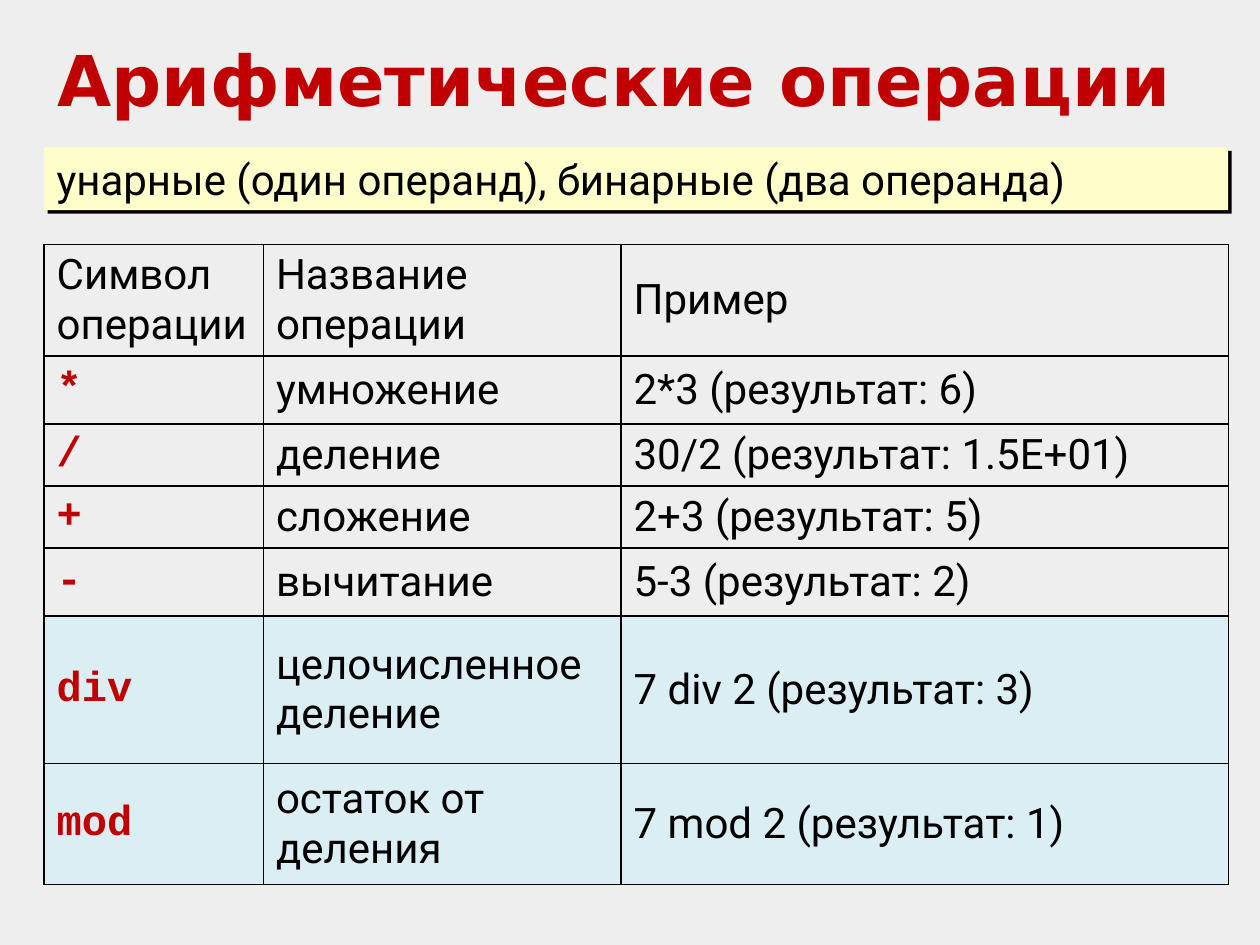
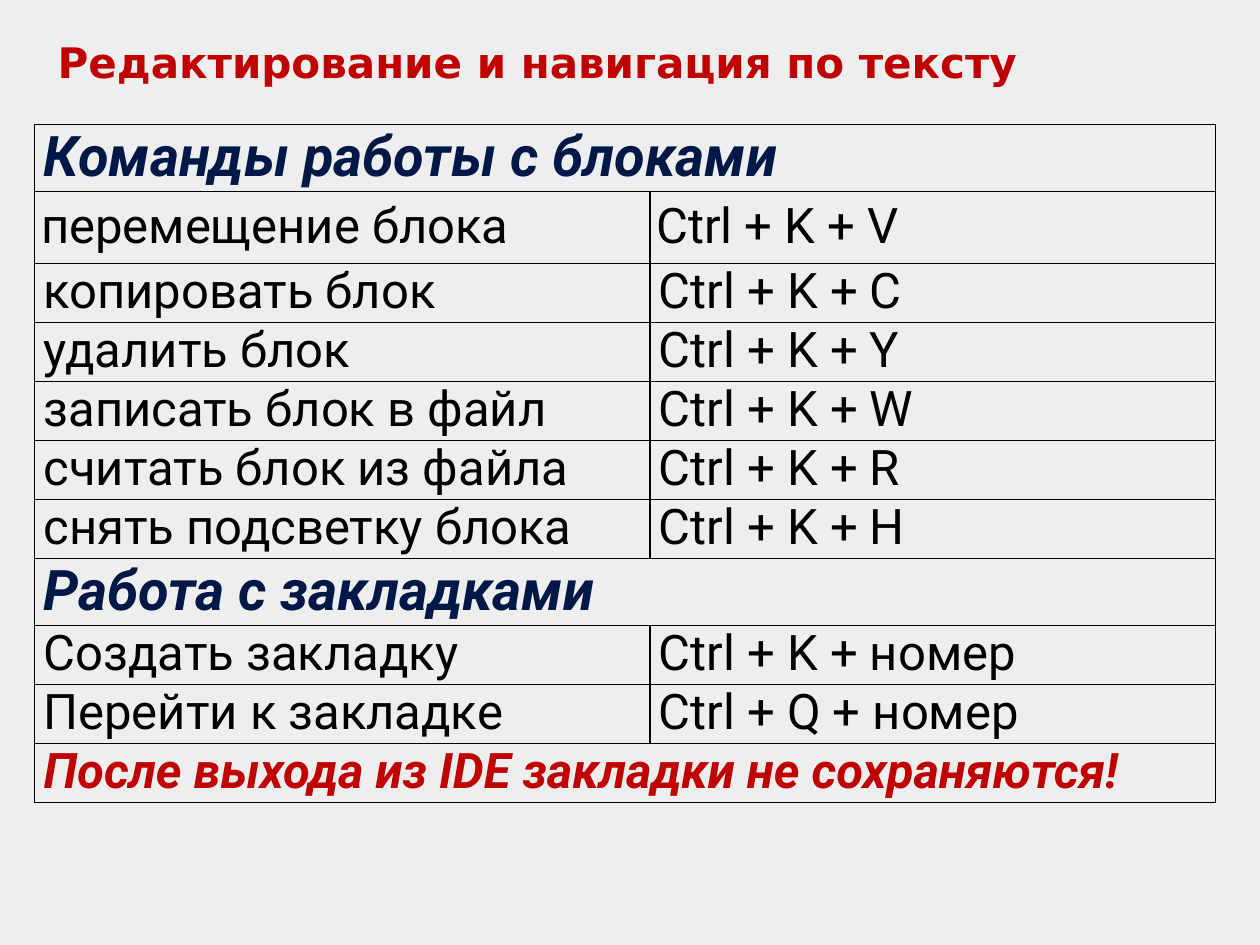
from dataclasses import dataclass

from lxml import etree
from pptx import Presentation
from pptx.dml.color import RGBColor
from pptx.enum import shapes, text
from pptx.oxml import ns
from pptx.util import Cm, Pt

COLORS = {
    "background": "EEEEEE",
    "accent": "C00000",
    "ink": "000000",
    "heading": "001848",
    "band": "FFFFCC",
    "integer_rows": "DBEEF4",
}
BODY_FONT = "Roboto"
TITLE_FONT = "DejaVu Sans"
CODE_FONT = "Courier New"

OPERATIONS = [
    ("Символ операции", "Название операции", "Пример"),
    ("*", "умножение", "2*3 (результат: 6)"),
    ("/", "деление", "30/2 (результат: 1.5E+01)"),
    ("+", "сложение", "2+3 (результат: 5)"),
    ("-", "вычитание", "5-3 (результат: 2)"),
    ("div", "целочисленное деление", "7 div 2 (результат: 3)"),
    ("mod", "остаток от деления", "7 mod 2 (результат: 1)"),
]
OPERATION_COLUMNS = [4.42, 7.21, 12.24]
OPERATION_ROWS = [2.22, 1.37, 1.25, 1.25, 1.37, 2.98, 2.44]

COMMANDS = [
    ("Команды работы с блоками",),
    ("перемещение блока", "Ctrl + K + V"),
    ("копировать блок", "Ctrl + K + C"),
    ("удалить блок", "Ctrl + K + Y"),
    ("записать блок в файл", "Ctrl + K + W"),
    ("считать блок из файла", "Ctrl + K + R"),
    ("снять подсветку блока", "Ctrl + K + H"),
    ("Работа с закладками",),
    ("Создать закладку", "Ctrl + K + номер"),
    ("Перейти к закладке", "Ctrl + Q + номер"),
    ("После выхода из IDE закладки не сохраняются!",),
]
COMMAND_COLUMNS = [12.4, 11.4]
HEADING_HEIGHT, FIRST_COMMAND_HEIGHT, COMMAND_HEIGHT = 1.35, 1.45, 1.19


@dataclass
class Box:
    left: float
    top: float
    width: float
    height: float

    def lengths(self):
        return Cm(self.left), Cm(self.top), Cm(self.width), Cm(self.height)


def color(name):
    return RGBColor.from_string(COLORS[name])


def style(paragraph, size, ink="ink", name=BODY_FONT, bold=False, italic=False):
    paragraph.alignment = text.PP_ALIGN.LEFT
    font = paragraph.font
    font.size, font.name, font.bold, font.italic = Pt(size), name, bold, italic
    font.color.rgb = color(ink)


def add_page(deck, title, size, box):
    page = deck.slides.add_slide(deck.slide_layouts[5])
    holder = page.shapes.title
    holder.left, holder.top, holder.width, holder.height = box.lengths()
    frame = holder.text_frame
    frame.text = title
    frame.auto_size = text.MSO_AUTO_SIZE.NONE
    frame.vertical_anchor = text.MSO_ANCHOR.TOP
    frame.margin_top = Cm(0.2)
    style(frame.paragraphs[0], size, "accent", TITLE_FONT, bold=True)
    return page


def add_band(page, box, wording):
    band = page.shapes.add_shape(shapes.MSO_SHAPE.RECTANGLE, *box.lengths())
    band.fill.solid()
    band.fill.fore_color.rgb = color("band")
    band.line.fill.background()
    band.shadow.inherit = False
    effects = band.element.spPr.find(ns.qn("a:effectLst"))
    shadow = etree.SubElement(effects, ns.qn("a:outerShdw"),
                              dist=str(Pt(2.8)), dir="2700000", algn="ctr", rotWithShape="0")
    etree.SubElement(shadow, ns.qn("a:srgbClr"), val=COLORS["ink"])
    frame = band.text_frame
    frame.word_wrap = True
    frame.vertical_anchor = text.MSO_ANCHOR.TOP
    frame.text = wording
    style(frame.paragraphs[0], 24)


def add_grid(page, box, columns, rows):
    table = page.shapes.add_table(len(rows), len(columns), *box.lengths()).table
    table.first_row = table.horz_banding = False
    for column, width in zip(table.columns, columns):
        column.width = Cm(width)
    for row, height in zip(table.rows, rows):
        row.height = Cm(height)
    for cell in table.iter_cells():
        properties = cell._tc.get_or_add_tcPr()
        for side in ("lnL", "lnR", "lnT", "lnB"):
            border = etree.SubElement(properties, ns.qn(f"a:{side}"), w=str(Pt(1)))
            fill = etree.SubElement(border, ns.qn("a:solidFill"))
            etree.SubElement(fill, ns.qn("a:srgbClr"), val=COLORS["ink"])
        cell.fill.background()
    return table


def add_operations(page, box):
    table = add_grid(page, box, OPERATION_COLUMNS, OPERATION_ROWS)
    for row, values in enumerate(OPERATIONS):
        for column, value in enumerate(values):
            cell = table.cell(row, column)
            cell.text = value
            cell.vertical_anchor = text.MSO_ANCHOR.MIDDLE
            if values[0] in ("div", "mod"):
                cell.fill.solid()
                cell.fill.fore_color.rgb = color("integer_rows")
            paragraph = cell.text_frame.paragraphs[0]
            if row and column == 0:
                style(paragraph, 24, "accent", CODE_FONT, bold=True)
            else:
                style(paragraph, 24)


def add_commands(page, box):
    last = len(COMMANDS) - 1
    heights = [HEADING_HEIGHT if len(values) == 1 and row != last else COMMAND_HEIGHT
               for row, values in enumerate(COMMANDS)]
    heights[1] = FIRST_COMMAND_HEIGHT
    table = add_grid(page, box, COMMAND_COLUMNS, heights)
    for row, values in enumerate(COMMANDS):
        spans_row = len(values) == 1
        if spans_row:
            table.cell(row, 0).merge(table.cell(row, 1))
        side, edge = (0.13, 0.13) if row == 1 else (0.18, 0)
        for column, value in enumerate(values):
            cell = table.cell(row, column)
            cell.text = value
            cell.margin_left = cell.margin_right = Cm(side)
            cell.margin_top = cell.margin_bottom = Cm(edge)
            paragraph = cell.text_frame.paragraphs[0]
            if row == last:
                style(paragraph, 28, "accent", bold=True, italic=True)
            elif spans_row:
                style(paragraph, 32, "heading", bold=True, italic=True)
            else:
                style(paragraph, 28)


def main():
    deck = Presentation()
    deck.slide_width, deck.slide_height = Cm(25.4), Cm(19.05)
    background = deck.slide_master.background.fill
    background.solid()
    background.fore_color.rgb = color("background")

    page = add_page(deck, "Арифметические операции", 40, Box(0.91, 0.53, 23.57, 2.2))
    add_operations(page, Box(0.89, 4.93, 23.87, 12.88))
    add_band(page, Box(0.89, 2.97, 23.87, 1.27),
             "унарные (один операнд), бинарные (два операнда)")

    page = add_page(deck, "Редактирование и навигация по тексту", 24,
                    Box(0.91, 0.53, 23.57, 1.8))
    add_commands(page, Box(0.7, 2.51, 23.8, 13.67))
    deck.save("out.pptx")


if __name__ == "__main__":
    main()
